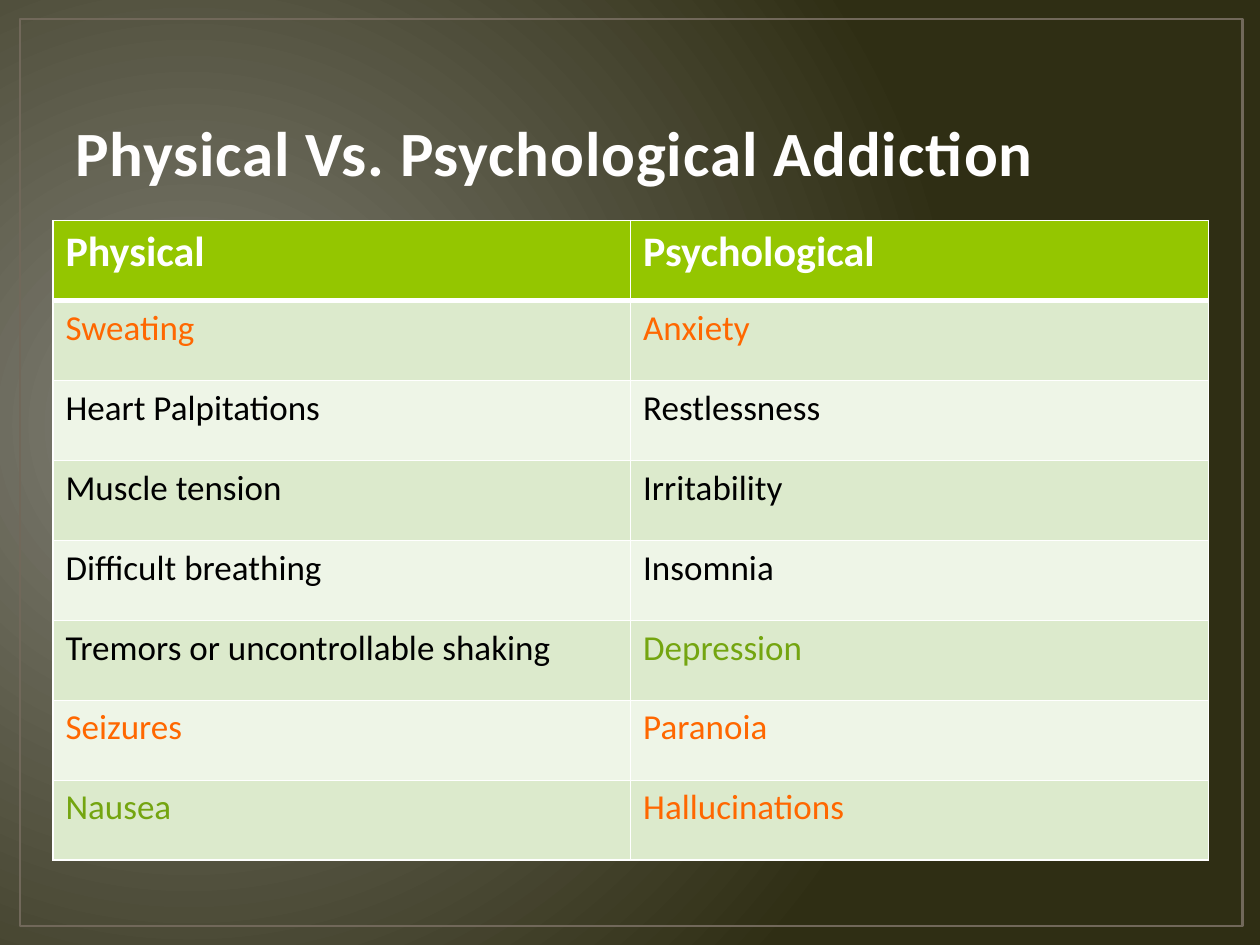
from lxml.etree import SubElement
from pptx import Presentation
from pptx.dml.color import RGBColor
from pptx.enum.shapes import MSO_SHAPE
from pptx.enum.text import MSO_ANCHOR
from pptx.oxml import parse_xml
from pptx.oxml.ns import nsdecls, qn
from pptx.util import Inches, Pt

FONT = "Calibri"
GLOW = RGBColor(0x81, 0x80, 0x76)
DARK_OLIVE = RGBColor(0x2F, 0x2E, 0x14)
FRAME_BROWN = RGBColor(0x71, 0x68, 0x5A)
TITLE_WHITE = RGBColor(0xFF, 0xFE, 0xFE)
TITLE_OUTLINE = RGBColor(0x4A, 0x63, 0x00)
WHITE = RGBColor(0xFF, 0xFF, 0xFF)
BLACK = RGBColor(0x00, 0x00, 0x00)
LIME = RGBColor(0x94, 0xC6, 0x00)
BAND_DARK = RGBColor(0xDC, 0xEA, 0xCC)
BAND_LIGHT = RGBColor(0xEE, 0xF5, 0xE7)
ORANGE = RGBColor(0xFF, 0x67, 0x00)
GREEN = RGBColor(0x74, 0xA5, 0x10)

HEADINGS = ("Physical", "Psychological")
SYMPTOMS = [
    ("Sweating", "Anxiety"),
    ("Heart Palpitations", "Restlessness"),
    ("Muscle tension", "Irritability"),
    ("Difficult breathing", "Insomnia"),
    ("Tremors or uncontrollable shaking", "Depression"),
    ("Seizures", "Paranoia"),
    ("Nausea", "Hallucinations"),
]
HIGHLIGHTS = {
    "Sweating": ORANGE,
    "Anxiety": ORANGE,
    "Seizures": ORANGE,
    "Paranoia": ORANGE,
    "Hallucinations": ORANGE,
    "Depression": GREEN,
    "Nausea": GREEN,
}


def line_xml(tag, color, points):
    return parse_xml(
        f'<a:{tag} {nsdecls("a")} w="{Pt(points)}"><a:solidFill>'
        f'<a:srgbClr val="{color}"/></a:solidFill></a:{tag}>'
    )


def style_run(run, size, color, bold=False):
    run.font.name = FONT
    run.font.size = Pt(size)
    run.font.bold = bold
    run.font.color.rgb = color


def paint_background(slide):
    """Fill the background with a circular glow left of the centre."""
    fill = slide.background.fill
    fill.gradient()
    for stop, color in zip(fill.gradient_stops, (GLOW, DARK_OLIVE)):
        stop.color.rgb = color
    gradient = slide.background._cSld.find(".//" + qn("a:gradFill"))
    gradient.remove(gradient.find(qn("a:lin")))
    glow_path = SubElement(gradient, qn("a:path"), path="circle")
    SubElement(glow_path, qn("a:fillToRect"),
               l="15000", t="50000", r="85000", b="60000")


def add_frame(slide, left, top, width, height):
    frame = slide.shapes.add_shape(MSO_SHAPE.RECTANGLE, left, top, width, height)
    frame.shadow.inherit = False
    frame.fill.background()
    frame.line.color.rgb = FRAME_BROWN
    frame.line.width = Pt(1.5)


def add_title(slide, left, top, width, height):
    text_frame = slide.shapes.add_textbox(left, top, width, height).text_frame
    text_frame.word_wrap = True
    text_frame.vertical_anchor = MSO_ANCHOR.BOTTOM
    text_frame.text = "Physical Vs. Psychological Addiction"
    run = text_frame.paragraphs[0].runs[0]
    style_run(run, 36, TITLE_WHITE, bold=True)
    properties = run._r.get_or_add_rPr()
    properties.set("spc", "50")
    properties.insert(0, line_xml("ln", TITLE_OUTLINE, 1.05))


def set_borders(cell, top, bottom):
    """Draw white cell borders; top and bottom are widths in points."""
    widths = {"lnL": 1, "lnR": 1, "lnT": top, "lnB": bottom}
    properties = cell._tc.get_or_add_tcPr()
    for position, (tag, points) in enumerate(widths.items()):
        properties.insert(position, line_xml(tag, WHITE, points))


def add_symptom_table(slide, left, top, width, height):
    rows = [HEADINGS, *SYMPTOMS]
    table = slide.shapes.add_table(
        len(rows), len(HEADINGS), left, top, width, height).table
    for r, row in enumerate(rows):
        for c, wording in enumerate(row):
            cell = table.cell(r, c)
            cell.text = wording
            run = cell.text_frame.paragraphs[0].runs[0]
            cell.fill.solid()
            if r == 0:
                cell.fill.fore_color.rgb = LIME
                style_run(run, 24, WHITE, bold=True)
            else:
                cell.fill.fore_color.rgb = BAND_DARK if r % 2 else BAND_LIGHT
                style_run(run, 20, HIGHLIGHTS.get(wording, BLACK))
            set_borders(cell, top=3 if r == 1 else 1, bottom=3 if r == 0 else 1)


def main():
    presentation = Presentation()
    presentation.slide_width = Inches(10)
    presentation.slide_height = Inches(7.5)
    slide = presentation.slides.add_slide(presentation.slide_layouts[6])
    paint_background(slide)
    add_frame(slide, Inches(0.16), Inches(0.15), Inches(9.7), Inches(7.2))
    add_title(slide, Inches(0.5), Inches(0.3), Inches(9), Inches(1.25))
    add_symptom_table(slide, Inches(0.42), Inches(1.75), Inches(9.17), Inches(5.08))
    presentation.save("out.pptx")


if __name__ == "__main__":
    main()
